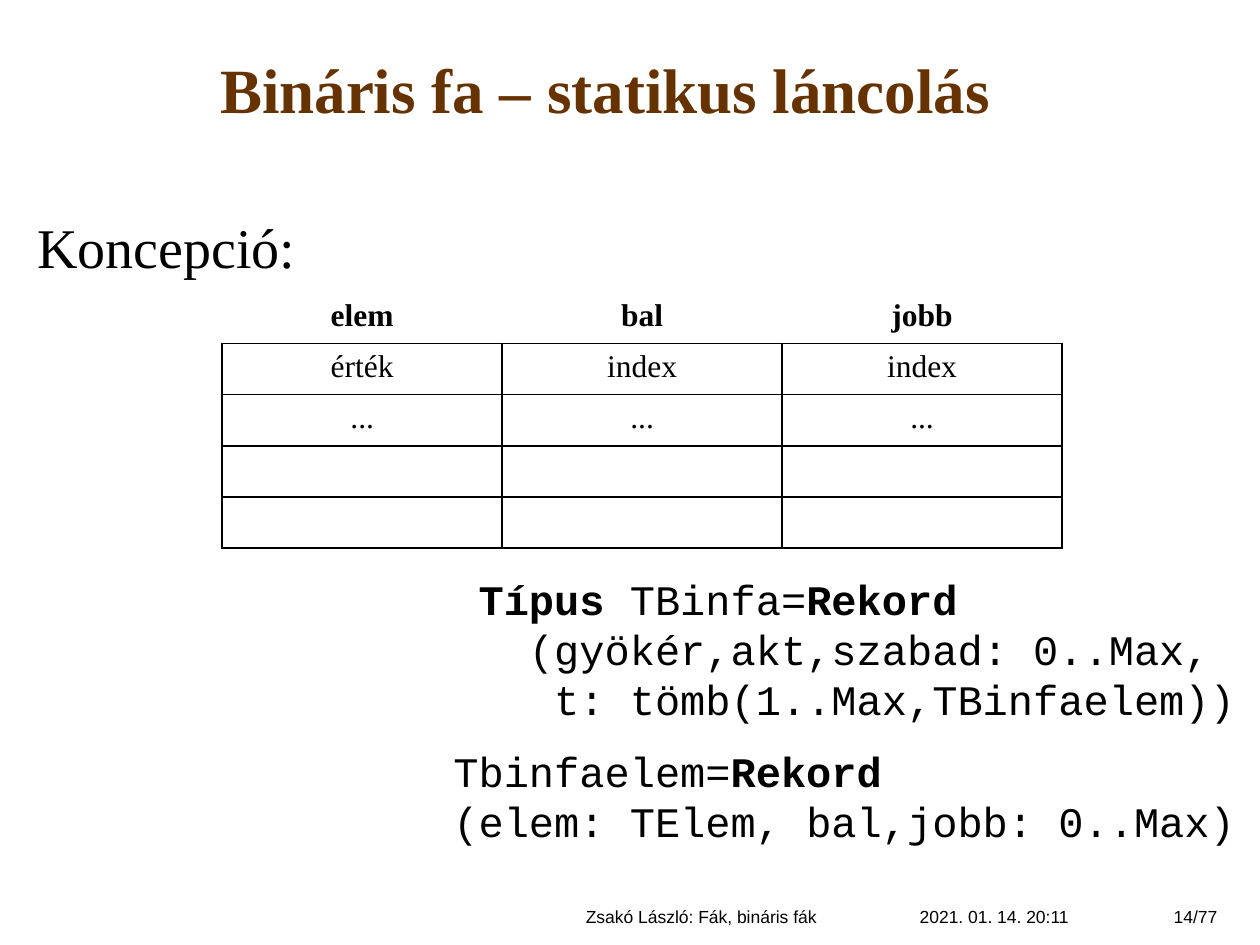
from dataclasses import dataclass

from lxml.etree import SubElement
from pptx import Presentation
from pptx.dml.color import RGBColor
from pptx.enum.text import MSO_ANCHOR as Anchor, PP_ALIGN as Align
from pptx.oxml.ns import qn
from pptx.util import Cm, Pt


@dataclass(frozen=True)
class Theme:
    ink: str = "000000"
    heading: str = "663300"
    paper: str = "FFFFFF"
    serif: str = "Times New Roman"
    sans: str = "Arial"
    mono: str = "Courier New"
    title_size: int = 36
    body_size: int = 32
    code_size: int = 24
    table_size: int = 18
    footer_size: int = 10


THEME = Theme()

TABLE_ROWS = [
    ("elem", "bal", "jobb"),
    ("érték", "index", "index"),
    ("...", "...", "..."),
    ("", "", ""),
    ("", "", ""),
]

# Each paragraph is a list of lines; each line is a list of (text, bold) parts.
CODE = [
    [
        [(" Típus ", True), ("TBinfa=", False), ("Rekord", True)],
        [("   (gyökér,akt,szabad: 0..Max,", False)],
        [("    t: tömb(1..Max,TBinfaelem))", False)],
    ],
    [[("Tbinfaelem=", False), ("Rekord", True)]],
    [[("(elem: TElem, bal,jobb: 0..Max)", False)]],
]


def style(paragraph, face, size, color=THEME.ink, bold=None, align=Align.LEFT):
    paragraph.alignment = align
    font = paragraph.font
    font.name, font.size, font.bold = face, Pt(size), bold
    font.color.rgb = RGBColor.from_string(color)


def add_frame(slide, left, top, width, height, anchor=Anchor.TOP):
    box = slide.shapes.add_textbox(Cm(left), Cm(top), Cm(width), Cm(height))
    frame = box.text_frame
    frame.word_wrap = True
    frame.vertical_anchor = anchor
    return frame


def add_title(slide, text):
    frame = add_frame(slide, 3.5, 0.23, 17.4, 3.1, Anchor.MIDDLE)
    frame.text = text
    style(frame.paragraphs[0], THEME.serif, THEME.title_size, THEME.heading,
          True, Align.CENTER)


def add_lead(slide, text):
    frame = add_frame(slide, 0.5, 4.32, 24.2, 3.15)
    frame.text = text
    lead = frame.paragraphs[0]
    lead.line_spacing = 0.9
    style(lead, THEME.serif, THEME.body_size)


def add_code(slide):
    frame = add_frame(slide, 8.89, 11.43, 16.51, 5.9)
    for index, lines in enumerate(CODE):
        paragraph = frame.add_paragraph() if index else frame.paragraphs[0]
        style(paragraph, THEME.mono, THEME.code_size)
        if index == 1:
            paragraph.space_before = Pt(THEME.code_size / 2)
        for number, parts in enumerate(lines):
            if number:
                paragraph.add_line_break()
            for text, bold in parts:
                run = paragraph.add_run()
                run.text = text
                run.font.bold = bold


def set_borders(cell, is_header):
    """Only the bottom edge of a header cell shows; other cells are boxed."""
    properties = cell._tc.get_or_add_tcPr()
    for side in "LRTB":
        color = THEME.paper if is_header and side != "B" else THEME.ink
        line = SubElement(properties, qn(f"a:ln{side}"), w=str(Pt(1)))
        fill = SubElement(line, qn("a:solidFill"))
        SubElement(fill, qn("a:srgbClr"), val=color)


def add_node_table(slide):
    table = slide.shapes.add_table(
        len(TABLE_ROWS), len(TABLE_ROWS[0]),
        Cm(4.48), Cm(5.89), Cm(16.93), Cm(5.16)).table
    table.first_row = table.horz_banding = False
    for r, texts in enumerate(TABLE_ROWS):
        is_header = r == 0
        for c, text in enumerate(texts):
            cell = table.cell(r, c)
            cell.text = text
            style(cell.text_frame.paragraphs[0], THEME.serif, THEME.table_size,
                  bold=is_header, align=Align.CENTER)
            set_borders(cell, is_header)
            cell.fill.background()


def add_footer(slide, text, left, width, align):
    frame = add_frame(slide, left, 18.13, width, 0.92)
    frame.text = text
    style(frame.paragraphs[0], THEME.sans, THEME.footer_size, align=align)


def main():
    deck = Presentation()
    deck.slide_width, deck.slide_height = Cm(25.4), Cm(19.05)
    slide = deck.slides.add_slide(deck.slide_layouts[6])
    add_title(slide, "Bináris fa – statikus láncolás")
    add_lead(slide, "Koncepció:")
    add_code(slide)
    add_node_table(slide)
    add_footer(slide, "Zsakó László: Fák, bináris fák", 10.11, 8.05, Align.CENTER)
    add_footer(slide, "2021. 01. 14. 20:11", 18.29, 4.2, Align.LEFT)
    add_footer(slide, "14/77", 23.29, 1.5, Align.RIGHT)
    deck.save("out.pptx")


if __name__ == "__main__":
    main()
